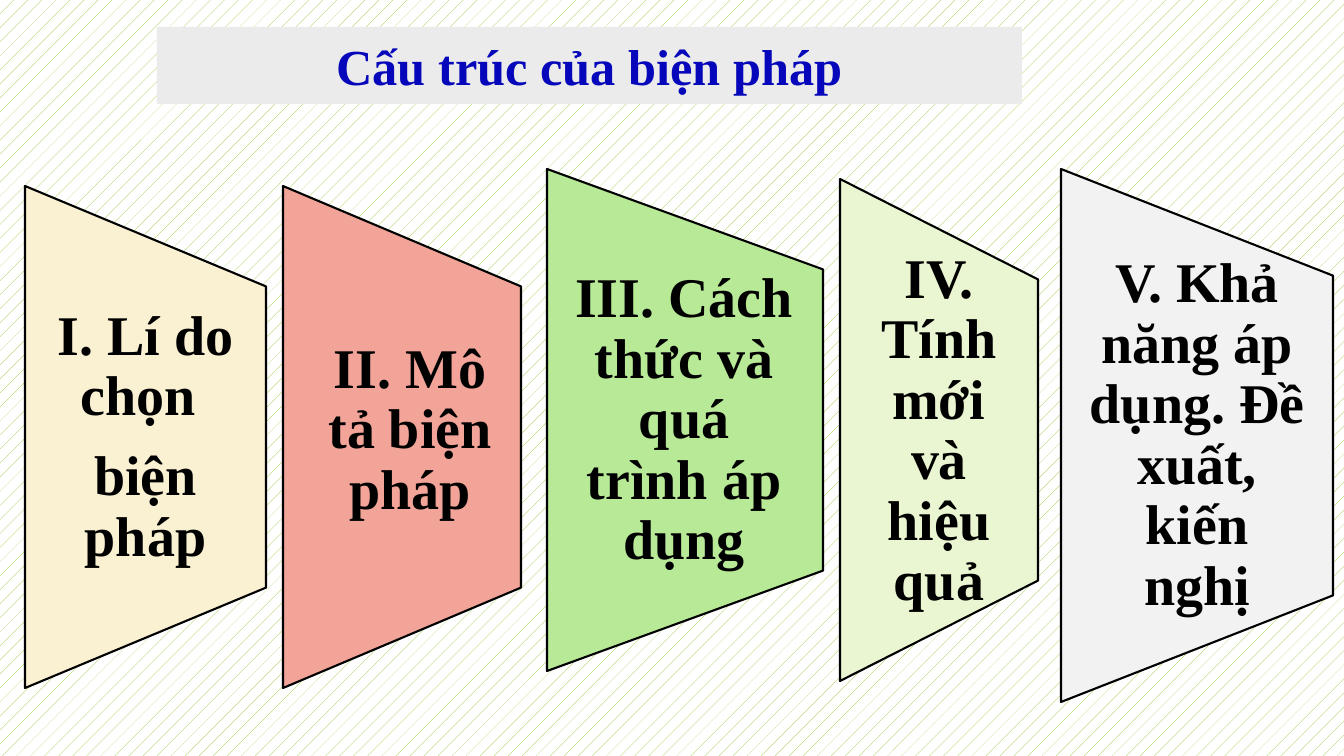
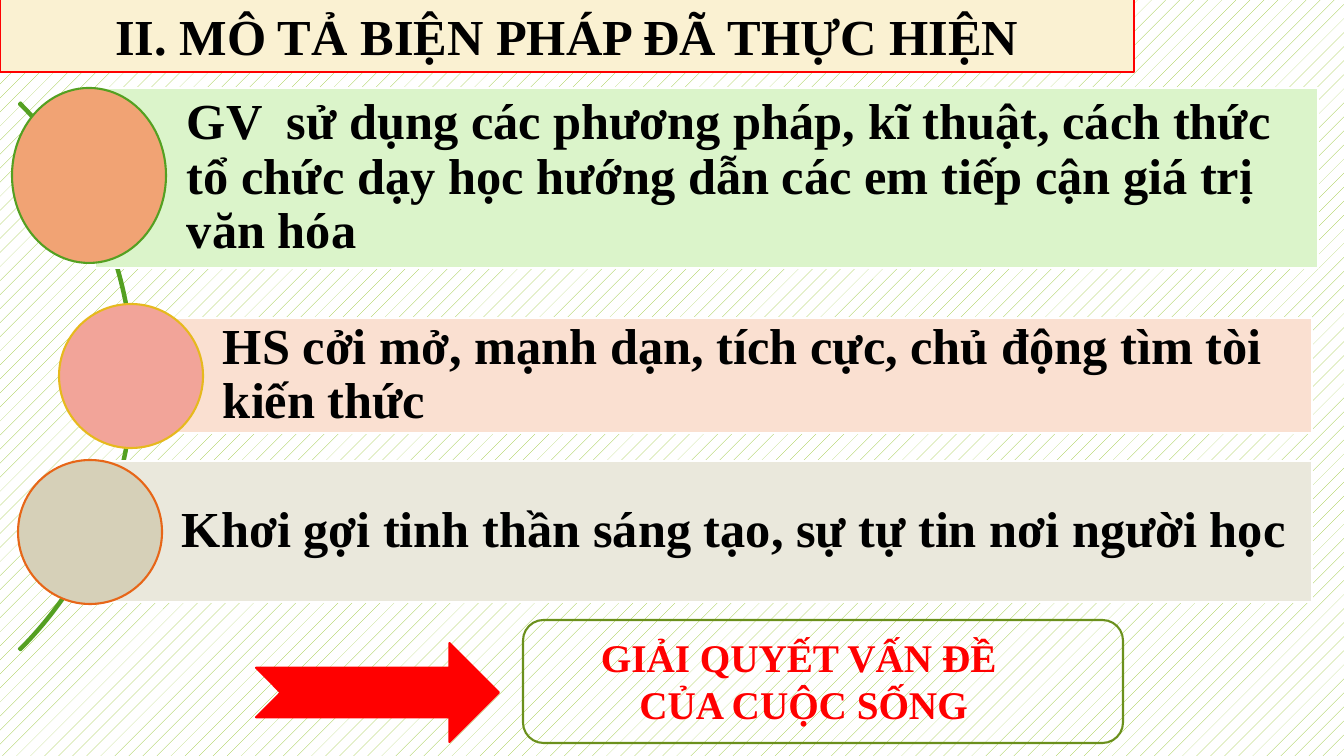
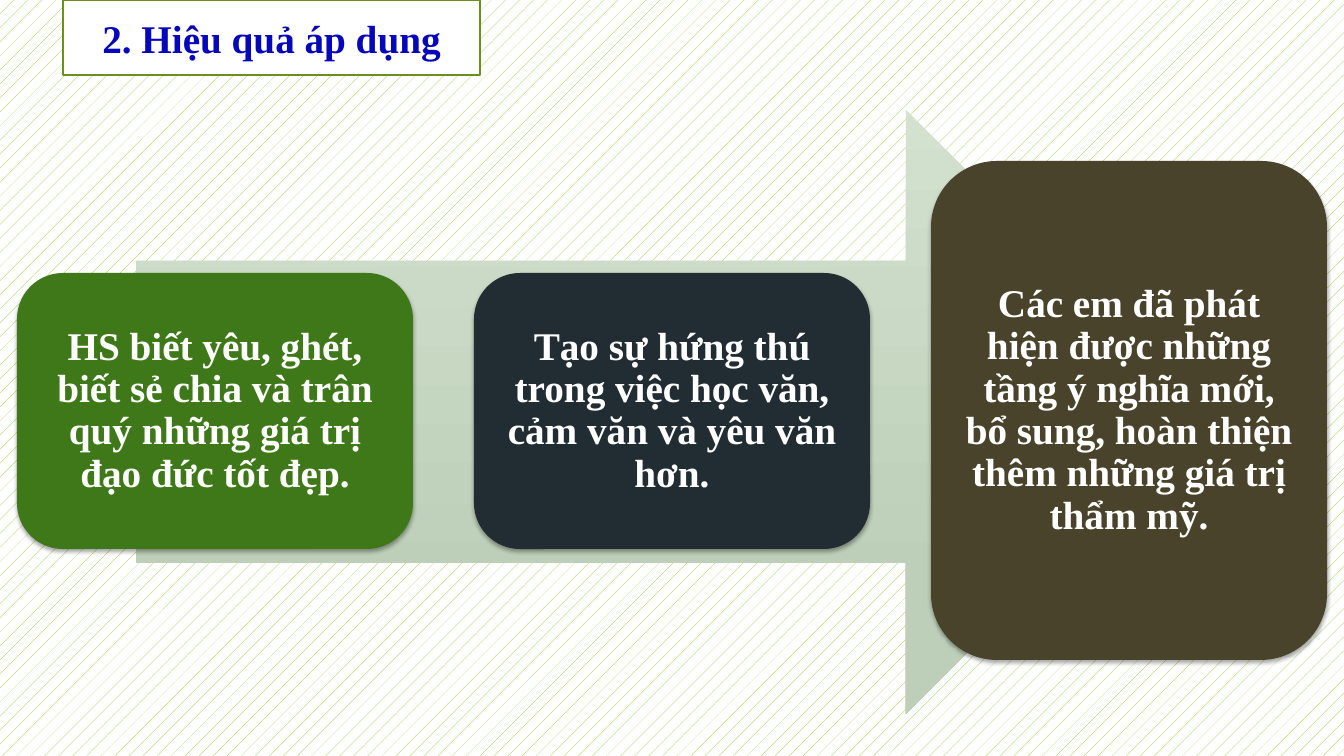
from pptx import Presentation
from pptx.dml.color import RGBColor
from pptx.enum.dml import MSO_PATTERN
from pptx.enum.shapes import MSO_SHAPE as SHAPE
from pptx.enum.text import MSO_ANCHOR as ANCHOR, PP_ALIGN as ALIGN
from pptx.oxml import parse_xml
from pptx.oxml.ns import nsdecls, qn
from pptx.util import Pt

PX = 12192000 / 1344
FONT = "Times New Roman"

BLACK = RGBColor(0x00, 0x00, 0x00)
WHITE = RGBColor(0xFF, 0xFF, 0xFF)
RED = RGBColor(0xFF, 0x00, 0x00)
BLUE = RGBColor(0x06, 0x06, 0xBA)
LIME = RGBColor(0x90, 0xC2, 0x26)
OLIVE = RGBColor(0x6B, 0x90, 0x1C)
GREEN = RGBColor(0x54, 0xA0, 0x21)
GOLD = RGBColor(0xE6, 0xB9, 0x1E)
ORANGE = RGBColor(0xE7, 0x66, 0x18)
CREAM = RGBColor(0xFA, 0xF1, 0xD2)
SALMON = RGBColor(0xF2, 0xA4, 0x99)
APRICOT = RGBColor(0xF1, 0xA3, 0x74)
PEACH = RGBColor(0xFA, 0xE0, 0xD1)
SAND = RGBColor(0xD6, 0xD0, 0xB8)
PALE_SAND = RGBColor(0xEA, 0xE8, 0xDC)
LEAF = RGBColor(0xB7, 0xE9, 0x96)
PALE_LIME = RGBColor(0xEA, 0xF6, 0xD1)
PALE_GREEN = RGBColor(0xDB, 0xF4, 0xCA)
TITLE_GREY = RGBColor(0xEB, 0xEB, 0xEB)
PANEL_GREY = RGBColor(0xF2, 0xF2, 0xF2)
SAGE_LIGHT = RGBColor(0xD3, 0xE1, 0xCF)
SAGE = RGBColor(0xBD, 0xCF, 0xB8)
FOREST = RGBColor(0x3F, 0x78, 0x19)
SLATE = RGBColor(0x21, 0x2D, 0x32)
BROWN = RGBColor(0x48, 0x43, 0x2A)

SOFT_SHADOW = (
    f'<a:outerShdw {nsdecls("a")} blurRad="40000" dist="23000" dir="5400000" rotWithShape="0">'
    '<a:srgbClr val="000000"><a:alpha val="35000"/></a:srgbClr></a:outerShdw>'
)


def add_box(slide, kind, box, fill=None, line=None):
    """Add a preset shape, or a text box when kind is None; box is in px."""
    place = [round(v * PX) for v in box]
    if kind is None:
        return slide.shapes.add_textbox(*place)
    shape = slide.shapes.add_shape(kind, *place)
    shape.shadow.inherit = False
    if fill is None:
        shape.fill.background()
    else:
        shape.fill.solid()
        shape.fill.fore_color.rgb = fill
    if line is None:
        shape.line.fill.background()
    else:
        shape.line.color.rgb = line
        shape.line.width = Pt(1.5)
    return shape


def add_text(shape, text, size=36, color=BLACK, align=ALIGN.CENTER, anchor=ANCHOR.MIDDLE,
             insets=(10, 5, 10, 5), spacing=1.0, after=0):
    """Write one bold paragraph per line of text; insets are left, top, right, bottom in px."""
    frame = shape.text_frame
    frame.word_wrap = True
    frame.vertical_anchor = anchor
    (frame.margin_left, frame.margin_top,
     frame.margin_right, frame.margin_bottom) = [round(v * PX) for v in insets]
    frame.text = text
    for paragraph in frame.paragraphs:
        paragraph.alignment = align
        paragraph.line_spacing = spacing
        paragraph.space_after = Pt(after)
        for run in paragraph.runs:
            run.font.name = FONT
            run.font.size = Pt(size)
            run.font.bold = True
            run.font.color.rgb = color


prs = Presentation()
prs.slide_width = round(1344 * PX)
prs.slide_height = round(756 * PX)
blank = prs.slide_layouts[6]

# Shared patterned background
backdrop = prs.slide_master.background.fill
backdrop.patterned()
backdrop.pattern = MSO_PATTERN.PERCENT_5
backdrop.fore_color.rgb = LIME
backdrop.back_color.rgb = WHITE

# Slide 1: five parts of the measure
slide = prs.slides.add_slide(blank)
title = add_box(slide, SHAPE.RECTANGLE, (157, 27, 865, 77), TITLE_GREY)
add_text(title, "Cấu trúc của biện pháp", color=BLUE)

parts = [
    ("I. Lí do chọn \nbiện pháp", CREAM, (25, 186, 241, 502), (25, 287, 241, 301)),
    ("II. Mô tả biện pháp", SALMON, (283, 186, 238, 502), (291, 272, 238, 317)),
    ("III. Cách thức và quá trình áp dụng", LEAF, (547, 169, 276, 502), (546, 270, 276, 301)),
    ("IV. Tính mới và hiệu quả", PALE_LIME, (840, 179, 198, 502), (848, 279, 182, 305)),
    ("V. Khả năng áp dụng. Đề xuất, kiến nghị", PANEL_GREY,
     (1061, 169, 272, 533), (1061, 276, 272, 320)),
]
for text, fill, (left, top, width, height), label_box in parts:
    # The panel is turned a quarter, so its sides swap around the same centre
    shift = (width - height) / 2
    panel = add_box(slide, SHAPE.FLOWCHART_MANUAL_OPERATION,
                    (left + shift, top - shift, height, width), fill, BLACK)
    panel.rotation = 270
    label = add_box(slide, None, label_box)
    add_text(label, text, size=40, insets=(28, 0, 28, 0), spacing=0.9, after=14)

# Slide 2: what was done
slide = prs.slides.add_slide(blank)
arc = add_box(slide, SHAPE.BLOCK_ARC, (-641, -11, 775, 775), line=GREEN)
for i, value in enumerate((189, 27, 0.003)):
    arc.adjustments[i] = value

actions = [
    ("GV  sử dụng các phương pháp, kĩ thuật, cách thức tổ chức dạy học "
     "hướng dẫn các em tiếp cận giá trị văn hóa",
     (95, 88, 1223, 180), PALE_GREEN, (12, 88, 154, 175), APRICOT, GREEN),
    ("HS cởi mở, mạnh dạn, tích cực, chủ động tìm tòi kiến thức",
     (131, 318, 1181, 115), PEACH, (59, 304, 144, 144), SALMON, GOLD),
    ("Khơi gợi tinh thần sáng tạo, sự tự tin nơi người học",
     (90, 461, 1222, 141), PALE_SAND, (18, 460, 144, 144), SAND, ORANGE),
]
for text, bar_box, bar_fill, disc_box, disc_fill, disc_line in actions:
    bar = add_box(slide, SHAPE.RECTANGLE, bar_box, bar_fill, WHITE)
    add_text(bar, text, align=ALIGN.LEFT, insets=(92, 10, 10, 10), spacing=0.9, after=13)
    add_box(slide, SHAPE.OVAL, disc_box, disc_fill, disc_line)

title = add_box(slide, SHAPE.RECTANGLE, (0, -2, 1134, 74), CREAM, RED)
add_text(title, "II. MÔ TẢ BIỆN PHÁP ĐÃ THỰC HIỆN")

# Outcome
add_box(slide, SHAPE.NOTCHED_RIGHT_ARROW, (256, 643, 243, 99), RED, RED)
outcome = add_box(slide, None, (460, 628, 687, 105))
add_text(outcome, "GIẢI QUYẾT VẤN ĐỀ \nCỦA CUỘC SỐNG", size=28, color=RED, anchor=ANCHOR.TOP)
add_box(slide, SHAPE.ROUNDED_RECTANGLE, (523, 620, 600, 123), line=OLIVE)

# Slide 3: effects, along an arrow
slide = prs.slides.add_slide(blank)
arrow = add_box(slide, SHAPE.RIGHT_ARROW, (136, 110, 1072, 604))
arrow.fill.gradient()
arrow.fill.gradient_angle = 270
for stop, color, position in zip(arrow.fill.gradient_stops, (SAGE_LIGHT, SAGE), (0, 0.78)):
    stop.color.rgb = color
    stop.position = position

effects = [
    ("HS biết yêu, ghét, biết sẻ chia và trân quý những giá trị đạo đức tốt đẹp.",
     FOREST, 273, 276),
    ("Tạo sự hứng thú trong việc học văn, cảm văn và yêu văn hơn.", SLATE, 273, 276),
    ("Các em đã phát hiện được những tầng ý nghĩa mới, bổ sung, hoàn thiện thêm "
     "những giá trị thẩm mỹ.", BROWN, 161, 499),
]
for i, (text, fill, top, height) in enumerate(effects):
    card = add_box(slide, SHAPE.ROUNDED_RECTANGLE, (17 + 457 * i, top, 396, height), fill)
    card._element.spPr.find(qn("a:effectLst")).append(parse_xml(SOFT_SHADOW))
    add_text(card, text, size=28, color=WHITE, insets=(12, 12, 12, 12), spacing=0.9, after=10)

title = add_box(slide, SHAPE.RECTANGLE, (63, 0, 417, 75), WHITE, OLIVE)
add_text(title, "2. Hiệu quả áp dụng", size=28, color=BLUE)

prs.save("out.pptx")
